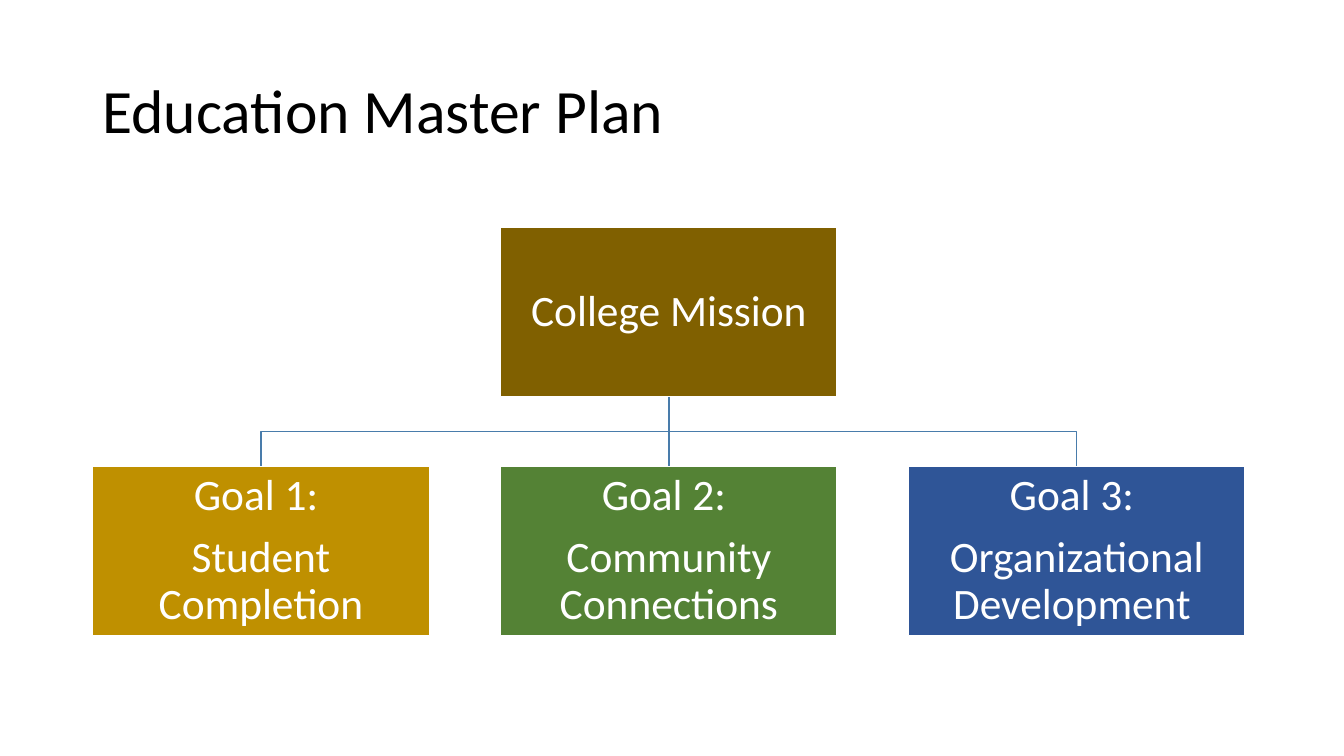
"""Build the Education Master Plan slide: a mission box above three goal boxes."""
from dataclasses import dataclass

from lxml import etree
from pptx import Presentation
from pptx.dml.color import RGBColor
from pptx.enum.shapes import MSO_CONNECTOR, MSO_SHAPE
from pptx.enum.text import MSO_ANCHOR, PP_ALIGN
from pptx.oxml.ns import qn
from pptx.shapes.autoshape import Shape
from pptx.shapes.connector import Connector
from pptx.slide import Slide
from pptx.text.text import TextFrame
from pptx.util import Cm, Pt

RECTANGLE = MSO_SHAPE.RECTANGLE
STRAIGHT = MSO_CONNECTOR.STRAIGHT
MIDDLE = MSO_ANCHOR.MIDDLE
LEFT, CENTER = PP_ALIGN.LEFT, PP_ALIGN.CENTER
TOP_SIDE, BOTTOM_SIDE = 0, 2

FONT = "Calibri"
COLORS = {
    "title": "000000",
    "white": "FFFFFF",
    "line": "497CAB",
    "mission": "806000",
    "completion": "BF9000",
    "community": "548235",
    "development": "2F5597",
}

MARGIN = 2.33
BOX_WIDTH, BOX_HEIGHT = 8.49, 4.25
COLUMN_STEP = 10.28
MISSION_TOP, GOAL_TOP = 5.74, 11.76
MISSION_BOTTOM = MISSION_TOP + BOX_HEIGHT
BRANCH_Y = (MISSION_BOTTOM + GOAL_TOP) / 2


@dataclass(frozen=True)
class PlanBox:
    """One box of the chart, placed by column."""

    text: str
    color: str
    column: int
    top: float

    @property
    def left(self) -> float:
        """Left edge in centimetres."""
        return MARGIN + self.column * COLUMN_STEP

    @property
    def center(self) -> float:
        """Horizontal middle in centimetres."""
        return self.left + BOX_WIDTH / 2


MISSION = PlanBox("College Mission", "mission", 1, MISSION_TOP)
GOALS = [
    PlanBox("Goal 1: \nStudent Completion", "completion", 0, GOAL_TOP),
    PlanBox("Goal 2: \nCommunity Connections", "community", 1, GOAL_TOP),
    PlanBox("Goal 3: \nOrganizational Development ", "development", 2, GOAL_TOP),
]


def rgb(name: str) -> RGBColor:
    """Look up a named colour."""
    return RGBColor.from_string(COLORS[name])


def write_text(frame: TextFrame, text: str, size: int, color: str,
               alignment: PP_ALIGN, space_after: int) -> None:
    """Fill a text frame and format every paragraph alike."""
    frame.word_wrap = True
    frame.vertical_anchor = MIDDLE
    frame.text = text
    for para in frame.paragraphs:
        para.alignment = alignment
        para.line_spacing = 0.9
        para.space_after = Pt(space_after)
        for span in para.runs:
            span.font.name = FONT
            span.font.size = Pt(size)
            span.font.color.rgb = rgb(color)


def style_line(shape: Shape | Connector, color: str) -> None:
    """Give a shape a one-point outline."""
    shape.line.color.rgb = rgb(color)
    shape.line.width = Pt(1)


def add_title(page: Slide) -> None:
    """Place the slide title."""
    box = page.shapes.add_textbox(Cm(MARGIN), Cm(1.01), Cm(29.21), Cm(3.68))
    write_text(box.text_frame, "Education Master Plan", 44, "title", LEFT, 0)


def add_branch(page: Slide, goal: PlanBox) -> None:
    """Draw the bent line from the mission to an outer goal."""
    points = [
        (Cm(MISSION.center), Cm(BRANCH_Y)),
        (Cm(goal.center), Cm(BRANCH_Y)),
        (Cm(goal.center), Cm(GOAL_TOP)),
    ]
    builder = page.shapes.build_freeform(Cm(MISSION.center), Cm(MISSION_BOTTOM))
    builder.add_line_segments(points, close=False)
    branch = builder.convert_to_shape()
    branch.shadow.inherit = False
    branch.fill.background()
    style_line(branch, "line")


def add_stem(page: Slide) -> Connector:
    """Draw the straight line below the mission."""
    stem = page.shapes.add_connector(STRAIGHT, Cm(MISSION.center), Cm(MISSION_BOTTOM),
                                     Cm(MISSION.center), Cm(GOAL_TOP))
    style_line(stem, "line")
    etree.SubElement(stem._element.spPr, qn("a:effectLst"))
    return stem


def add_box(page: Slide, item: PlanBox) -> Shape:
    """Draw one filled box with its text."""
    box = page.shapes.add_shape(RECTANGLE, Cm(item.left), Cm(item.top),
                                Cm(BOX_WIDTH), Cm(BOX_HEIGHT))
    box.shadow.inherit = False
    box.fill.solid()
    box.fill.fore_color.rgb = rgb(item.color)
    style_line(box, "white")
    frame = box.text_frame
    frame.margin_left = frame.margin_right = Cm(0.05)
    frame.margin_top = frame.margin_bottom = Cm(0.05)
    write_text(frame, item.text, 31, "white", CENTER, 11)
    return box


def main() -> None:
    """Build and save the deck."""
    deck = Presentation()
    deck.slide_width, deck.slide_height = Cm(33.87), Cm(19.05)
    page = deck.slides.add_slide(deck.slide_layouts[6])
    add_title(page)
    for goal in GOALS:
        if goal.column != MISSION.column:
            add_branch(page, goal)
    stem = add_stem(page)
    mission_box = add_box(page, MISSION)
    goal_boxes = [add_box(page, goal) for goal in GOALS]
    stem.begin_connect(mission_box, BOTTOM_SIDE)
    stem.end_connect(goal_boxes[MISSION.column], TOP_SIDE)
    deck.save("out.pptx")


if __name__ == "__main__":
    main()
